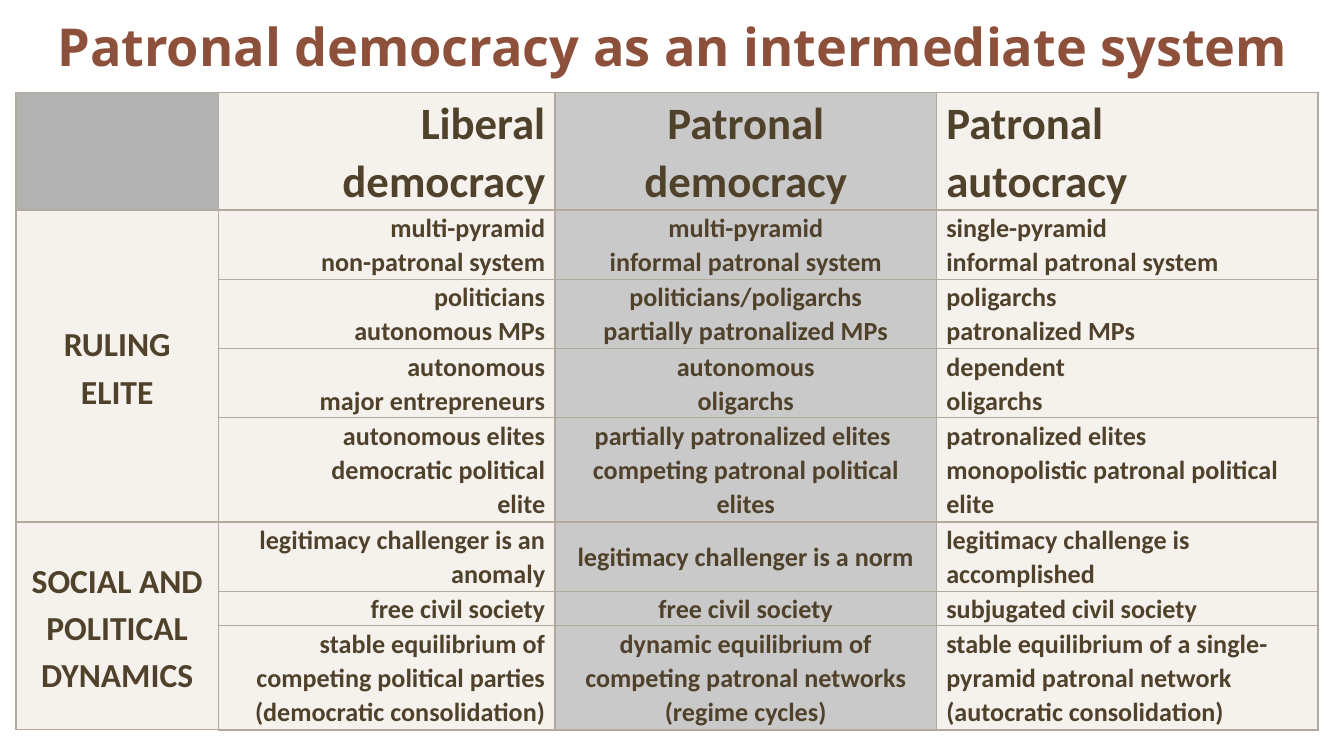
from copy import deepcopy
from lxml import etree
from pptx import Presentation
from pptx import util as u
from pptx.dml import color
from pptx.enum import text
from pptx.oxml import ns

# Content: "\n" starts a new paragraph, "\v" breaks a line
TITLE = "Patronal democracy as an intermediate system"
HEADERS = ["Liberal democracy", "Patronal\vdemocracy", "Patronal\vautocracy"]
GROUPS = [
    ("RULING ELITE", [
        ("multi-pyramid\nnon-patronal system",
         "multi-pyramid\ninformal patronal system",
         "single-pyramid\ninformal patronal system"),
        ("politicians\vautonomous MPs",
         "politicians/poligarchs\vpartially patronalized MPs",
         "poligarchs\vpatronalized MPs"),
        ("autonomous\nmajor entrepreneurs",
         "autonomous\noligarchs",
         "dependent\noligarchs"),
        ("autonomous elites\ndemocratic political\velite",
         "partially patronalized elites \ncompeting patronal political elites",
         "patronalized elites\nmonopolistic patronal political elite"),
    ]),
    ("SOCIAL AND POLITICAL DYNAMICS", [
        ("legitimacy challenger is an anomaly",
         "legitimacy challenger is a norm",
         "legitimacy challenge is accomplished"),
        ("free civil society", "free civil society", "subjugated civil society"),
        ("stable equilibrium of competing political parties\n(democratic consolidation)",
         "dynamic equilibrium of competing patronal networks\n(regime cycles)",
         "stable equilibrium of a single-pyramid patronal network\n(autocratic consolidation)"),
    ]),
]

# Layout on a page of 1920 by 1080 px
PX = u.Inches(10) / 1920
COLUMNS = [289, 481, 545, 545]
ROWS = [168, 99, 99, 99, 149, 99, 49, 149]
COLORS = {"title": "8D503B", "text": "50412B", "border": "B3A99D",
          "corner": "808080", "plain": "EFEAE4", "middle": "A6A6A6"}
ALIGN = text.PP_ALIGN
ALIGNS = [ALIGN.CENTER, ALIGN.RIGHT, ALIGN.CENTER, ALIGN.LEFT]


def px(*lengths):
    return [u.Emu(round(length * PX)) for length in lengths]


def write(frame, words, size, align, font="Calibri", tint="text", spacing=1.0):
    frame.word_wrap = True
    frame.text = words
    for para in frame.paragraphs:
        para.alignment, para.line_spacing = align, spacing
        for span in para.runs:
            span.font.name, span.font.size, span.font.bold = font, u.Pt(size), True
            span.font.color.rgb = color.RGBColor.from_string(COLORS[tint])
        # Line breaks take the format of the text around them
        for line_break in para._p.findall(ns.qn("a:br")):
            line_break.append(deepcopy(para.runs[0]._r.rPr))


def paint(cell, tint, widths):
    cell.fill.solid()
    cell.fill.fore_color.rgb = color.RGBColor.from_string(COLORS[tint])
    props = cell._tc.tcPr
    shade = props.find(".//" + ns.qn("a:srgbClr"))
    etree.SubElement(shade, ns.qn("a:alpha"), val="60000")
    for place, (side, width) in enumerate(widths.items()):
        line = etree.Element(ns.qn("a:ln" + side), w=str(u.Pt(width)))
        solid = etree.SubElement(line, ns.qn("a:solidFill"))
        etree.SubElement(solid, ns.qn("a:srgbClr"), val=COLORS["border"])
        props.insert(place, line)


deck = Presentation()
deck.slide_width, deck.slide_height = px(1920, 1080)
page = deck.slides.add_slide(deck.slide_layouts[6])

# Title
box = page.shapes.add_textbox(*px(23, 12, 1874, 106))
box.text_frame.vertical_anchor = text.MSO_ANCHOR.MIDDLE
write(box.text_frame, TITLE, 28, ALIGN.CENTER, font="Open Sans", tint="title")

# Table grid
table = page.shapes.add_table(len(ROWS), len(COLUMNS),
                              *px(23, 132, sum(COLUMNS), sum(ROWS))).table
table.first_row = table.horz_banding = False
for column, width in zip(table.columns, px(*COLUMNS)):
    column.width = width
for row, height in zip(table.rows, px(*ROWS)):
    row.height = height

# Cell fills, borders and margins
for r in range(len(ROWS)):
    for c in range(len(COLUMNS)):
        cell = table.cell(r, c)
        cell.vertical_anchor = text.MSO_ANCHOR.MIDDLE
        cell.margin_left, cell.margin_right, cell.margin_top, cell.margin_bottom = px(14, 14, 0, 0)
        tint = "corner" if r == c == 0 else "middle" if c == 2 else "plain"
        paint(cell, tint, {"L": 1 if c == 0 else 0.75, "R": 0.75,
                           "T": 1 if r == 0 else 0.75,
                           "B": 1 if r == len(ROWS) - 1 else 0.75})

# Column headers
for c, words in enumerate(HEADERS, 1):
    write(table.cell(0, c).text_frame, words, 24, ALIGNS[c], spacing=1.07)

# Row groups
top = 1
for label, lines in GROUPS:
    head = table.cell(top, 0)
    head.merge(table.cell(top + len(lines) - 1, 0))
    write(head.text_frame, label, 18, ALIGNS[0], spacing=1.15)
    for r, entries in enumerate(lines, top):
        for c, words in enumerate(entries, 1):
            write(table.cell(r, c).text_frame, words, 14, ALIGNS[c], spacing=1.07)
    top += len(lines)

deck.save("out.pptx")
